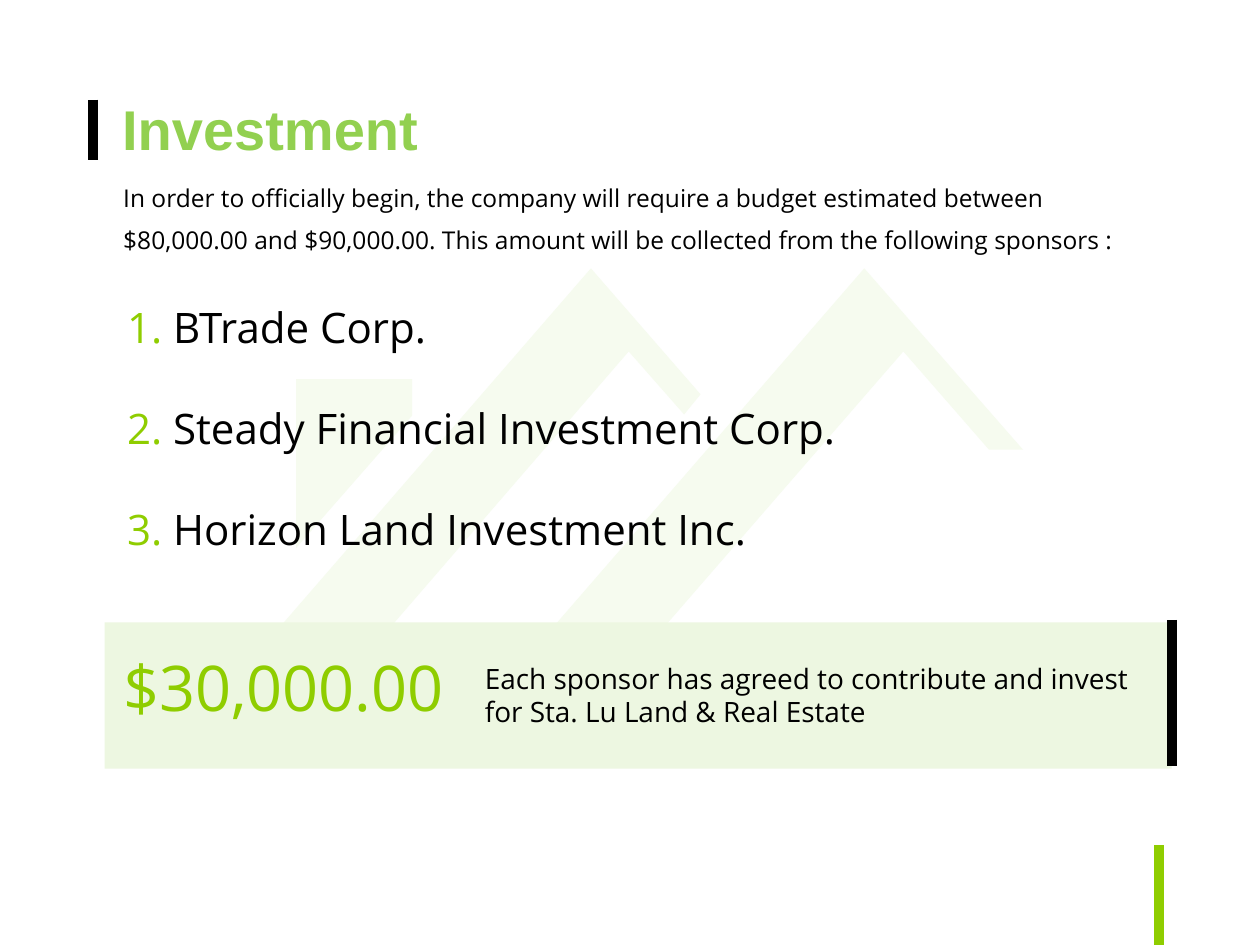
from lxml import etree
from pptx import Presentation
from pptx import util as u
from pptx.dml.color import RGBColor
from pptx.enum import shapes, text
from pptx.oxml.ns import qn

GREEN = RGBColor(0x8F, 0xCD, 0x00)
TITLE_GREEN = RGBColor(0x92, 0xD0, 0x50)
PALE_GREEN = RGBColor(0xED, 0xF7, 0xE1)
ROOF_GREEN = RGBColor(0xF6, 0xFB, 0xEF)
BLACK = RGBColor(0, 0, 0)

# Grid: 100 columns by 75 rows over the whole slide
prs = Presentation()
prs.slide_width, prs.slide_height = u.Inches(10), u.Inches(7.5)
COL, ROW = prs.slide_width / 100, prs.slide_height / 75
slide = prs.slides.add_slide(prs.slide_layouts[5])


def grid(x, y, *size):
    """Turn columns and rows into slide lengths."""
    return [round(v * step) for v, step in zip((x, y, *size), (COL, ROW) * 2)]


def add_copy(words, box, size, color=BLACK):
    """Add a wrapped Open Sans text box with one paragraph."""
    frame = slide.shapes.add_textbox(*grid(*box)).text_frame
    frame.word_wrap = True
    paragraph = frame.paragraphs[0]
    paragraph.text = words
    paragraph.font.name, paragraph.font.size = "Open Sans", u.Pt(size)
    paragraph.font.color.rgb = color
    return frame


# Pale house emblem: two roofs and a wall
left_roof = [(54.3, 32.9), (55.6, 31.3), (46.9, 21.3), (18.8, 53.7),
             (27.6, 53.7), (49.9, 27.9)]
right_roof = [(81.2, 35.7), (68.6, 21.3), (40.5, 53.7), (49.3, 53.7),
              (71.7, 27.9), (78.5, 35.7)]
wall = [(32.7, 33), (32.7, 30.1), (23.5, 30.1), (23.5, 43.5)]
for outline in (left_roof, right_roof, wall):
    start, *corners = [grid(*corner) for corner in outline]
    builder = slide.shapes.build_freeform(*start)
    builder.add_line_segments(corners, close=True)
    emblem = builder.convert_to_shape()
    emblem.shadow.inherit = False
    emblem.fill.solid()
    emblem.fill.fore_color.rgb = ROOF_GREEN
    emblem.line.fill.background()

# Title
title = slide.shapes.title
title.left, title.top, title.width, title.height = grid(8.7, 7, 28.2, 6.4)
title.text_frame.auto_size = text.MSO_AUTO_SIZE.NONE
title.text_frame.vertical_anchor = text.MSO_ANCHOR.TOP
heading = title.text_frame.paragraphs[0]
heading.text = "Investment"
heading.alignment = text.PP_ALIGN.LEFT
heading.font.name, heading.font.size, heading.font.bold = "Arial", u.Pt(32), True
heading.font.color.rgb = TITLE_GREEN

# Introduction
intro = add_copy(
    "In order to officially begin, the company will require a budget estimated "
    "between $80,000.00 and $90,000.00. This amount will be collected from the "
    "following sponsors :", (8.8, 13, 83.7, 6.6), 14)
intro.paragraphs[0].line_spacing = 1.43

# Numbered sponsors
sponsors = ["BTrade Corp.", "Steady Financial Investment Corp.",
            "Horizon Land Investment Inc."]
sponsor_list = add_copy("", (9.1, 23.4, 62.8, 21.2), 24)
for number, sponsor in enumerate(sponsors, 1):
    if number == 1:
        entry = sponsor_list.paragraphs[0]
    else:
        entry = sponsor_list.add_paragraph()
        entry.space_before = u.Pt(29)
    entry.font.name, entry.font.size = "Open Sans", u.Pt(24)
    for words, color in ((f"{number}. ", GREEN), (sponsor, BLACK)):
        run = entry.add_run()
        run.text = words
        run.font.color.rgb = color

# Contribution band
band = slide.shapes.add_shape(shapes.MSO_SHAPE.RECTANGLE,
                              *grid(8.3, 49.4, 84.7, 11.6))
band.shadow.inherit = False
band.fill.solid()
band.fill.fore_color.rgb = PALE_GREEN
band.line.fill.background()
add_copy("$30,000.00", (8.8, 51, 27.7, 7.1), 36, GREEN)
add_copy("Each sponsor has agreed to contribute and invest "
         "for Sta. Lu Land & Real Estate", (37.5, 52, 54.3, 6.4), 16)

# Accent bars beside the title, the band and the foot of the slide
for x, top, bottom, color in ((7.4, 7.9, 12.7, BLACK), (93, 49.2, 60.8, BLACK),
                              (92, 67.1, 75, GREEN)):
    bar = slide.shapes.add_connector(shapes.MSO_CONNECTOR.STRAIGHT,
                                     *grid(x, top, x, bottom))
    bar.line.color.rgb, bar.line.width = color, u.Pt(6)
    etree.SubElement(bar._element.spPr, qn("a:effectLst"))

prs.save("out.pptx")
